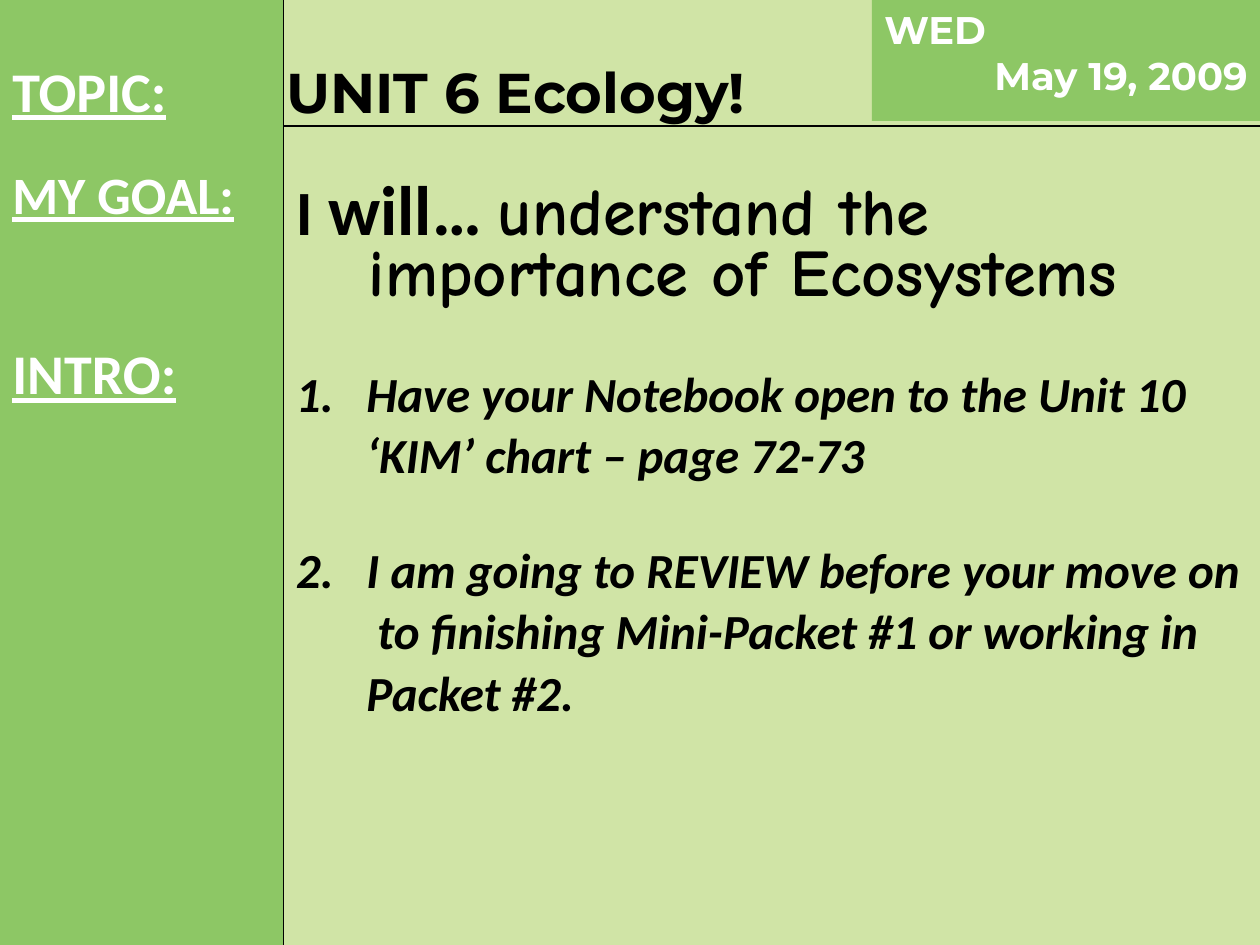
import pptx
import pptx.dml.color
import pptx.enum.shapes
import pptx.enum.text
import pptx.oxml
import pptx.oxml.ns
import pptx.util

Inches = pptx.util.Inches
Pt = pptx.util.Pt
ALIGN = pptx.enum.text.PP_ALIGN
ANCHOR = pptx.enum.text.MSO_ANCHOR

COLORS = {
    "background": "D0E4A6",
    "panel": "8DC765",
    "light": "FFFFFF",
    "dark": "000000",
}


def color(name):
    return pptx.dml.color.RGBColor.from_string(COLORS[name])


def add_panel(slide, box):
    shape = slide.shapes.add_shape(pptx.enum.shapes.MSO_SHAPE.RECTANGLE, *box)
    shape.shadow.inherit = False
    shape.fill.solid()
    shape.fill.fore_color.rgb = color("panel")
    shape.line.fill.background()
    return shape


def add_text_box(slide, box):
    frame = slide.shapes.add_textbox(*box).text_frame
    frame.word_wrap = True
    return frame


def next_paragraph(frame, first):
    return frame.paragraphs[0] if first else frame.add_paragraph()


def add_run(paragraph, text, size, font="Calibri", ink="dark",
            bold=True, italic=False, underline=False):
    run = paragraph.add_run()
    run.text = text
    run.font.name = font
    run.font.size = Pt(size)
    run.font.bold = bold
    run.font.italic = italic
    run.font.underline = underline
    run.font.color.rgb = color(ink)


def set_hanging(paragraph, indent):
    properties = paragraph._p.get_or_add_pPr()
    properties.set("marL", str(indent))
    properties.set("indent", str(-indent))
    return properties


def add_line(slide, start, end, width):
    line = slide.shapes.add_connector(
        pptx.enum.shapes.MSO_CONNECTOR.STRAIGHT, *start, *end)
    line.line.color.rgb = color("dark")
    line.line.width = Pt(width)
    line._element.spPr.append(pptx.oxml.parse_xml(
        "<a:effectLst %s/>" % pptx.oxml.ns.nsdecls("a")))


def add_sidebar(slide, left, top, width, height):
    add_panel(slide, (left, top, width, height))
    frame = add_text_box(
        slide, (left, top + Inches(0.5), width + Inches(0.42), Inches(6.83)))
    labels = [("TOPIC:", 32, 6.4), ("MY GOAL:", 30, 29), ("INTRO:", 32, 73)]
    for index, (text, size, gap) in enumerate(labels):
        paragraph = next_paragraph(frame, index == 0)
        paragraph.line_spacing = 0.8
        paragraph.space_before = Pt(gap)
        set_hanging(paragraph, Inches(0.38))
        add_run(paragraph, text, size, ink="light", underline=True)


def add_date(slide, left, top, width, height):
    frame = add_panel(slide, (left, top, width, height)).text_frame
    frame.word_wrap = True
    frame.vertical_anchor = ANCHOR.TOP
    lines = [("WED", ALIGN.LEFT), ("May 19, 2009", ALIGN.RIGHT)]
    for index, (text, alignment) in enumerate(lines):
        paragraph = next_paragraph(frame, index == 0)
        paragraph.alignment = alignment
        add_run(paragraph, text, 22, "Montserrat", "light")


def place_title(slide, left, top, width, height):
    title = slide.shapes.title
    title.left, title.top, title.width, title.height = left, top, width, height
    frame = title.text_frame
    frame.word_wrap = True
    frame.auto_size = pptx.enum.text.MSO_AUTO_SIZE.NONE
    frame.vertical_anchor = ANCHOR.MIDDLE
    paragraph = frame.paragraphs[0]
    paragraph.alignment = ALIGN.LEFT
    paragraph.line_spacing = 0.7
    add_run(paragraph, "UNIT 6 Ecology!", 32, "Montserrat")


def add_goal(slide, left, top, width, height):
    paragraph = add_text_box(slide, (left, top, width, height)).paragraphs[0]
    paragraph.line_spacing = 0.75
    set_hanging(paragraph, Inches(0.58))
    add_run(paragraph, "I", 36)
    add_run(paragraph, " will… ", 40)
    add_run(paragraph, "understand the importance of Ecosystems", 38,
            "Comic Neue")


def add_intro(slide, left, top, width, height):
    frame = add_text_box(slide, (left, top, width, height))
    steps = [
        "Have your Notebook open to the Unit 10 ‘KIM’ chart – page 72-73",
        "I am going to REVIEW before your move on  to finishing "
        "Mini-Packet #1 or working in Packet #2.",
    ]
    for index, text in enumerate(steps):
        paragraph = next_paragraph(frame, index == 0)
        paragraph.line_spacing = 1.05
        paragraph.space_before = Pt(30 if index else 0)
        properties = set_hanging(paragraph, Inches(0.56))
        properties.append(pptx.oxml.parse_xml(
            '<a:buFont %s typeface="+mj-lt"/>' % pptx.oxml.ns.nsdecls("a")))
        properties.append(pptx.oxml.parse_xml(
            '<a:buAutoNum %s type="arabicPeriod"/>' % pptx.oxml.ns.nsdecls("a")))
        add_run(paragraph, text, 28, italic=True)


def main():
    presentation = pptx.Presentation()
    presentation.slide_width = Inches(10)
    presentation.slide_height = Inches(7.5)
    slide = presentation.slides.add_slide(presentation.slide_layouts[5])
    slide.background.fill.solid()
    slide.background.fill.fore_color.rgb = color("background")

    page_width, page_height = presentation.slide_width, presentation.slide_height
    edge = Inches(2.25)
    rule = Inches(1)
    content_width = page_width - edge

    add_sidebar(slide, 0, 0, edge, page_height)
    add_date(slide, Inches(6.92), 0, Inches(3.08), Inches(0.96))
    add_goal(slide, edge, Inches(1.42), content_width, Inches(5.92))
    place_title(slide, Inches(2.17), Inches(0.08), Inches(5.67), Inches(1.42))
    add_line(slide, (edge, rule), (page_width, rule), 1.5)
    add_line(slide, (edge, 0), (edge, page_height), 0.75)
    add_intro(slide, edge, Inches(2.81), content_width, Inches(3.07))
    presentation.save("out.pptx")


if __name__ == "__main__":
    main()
